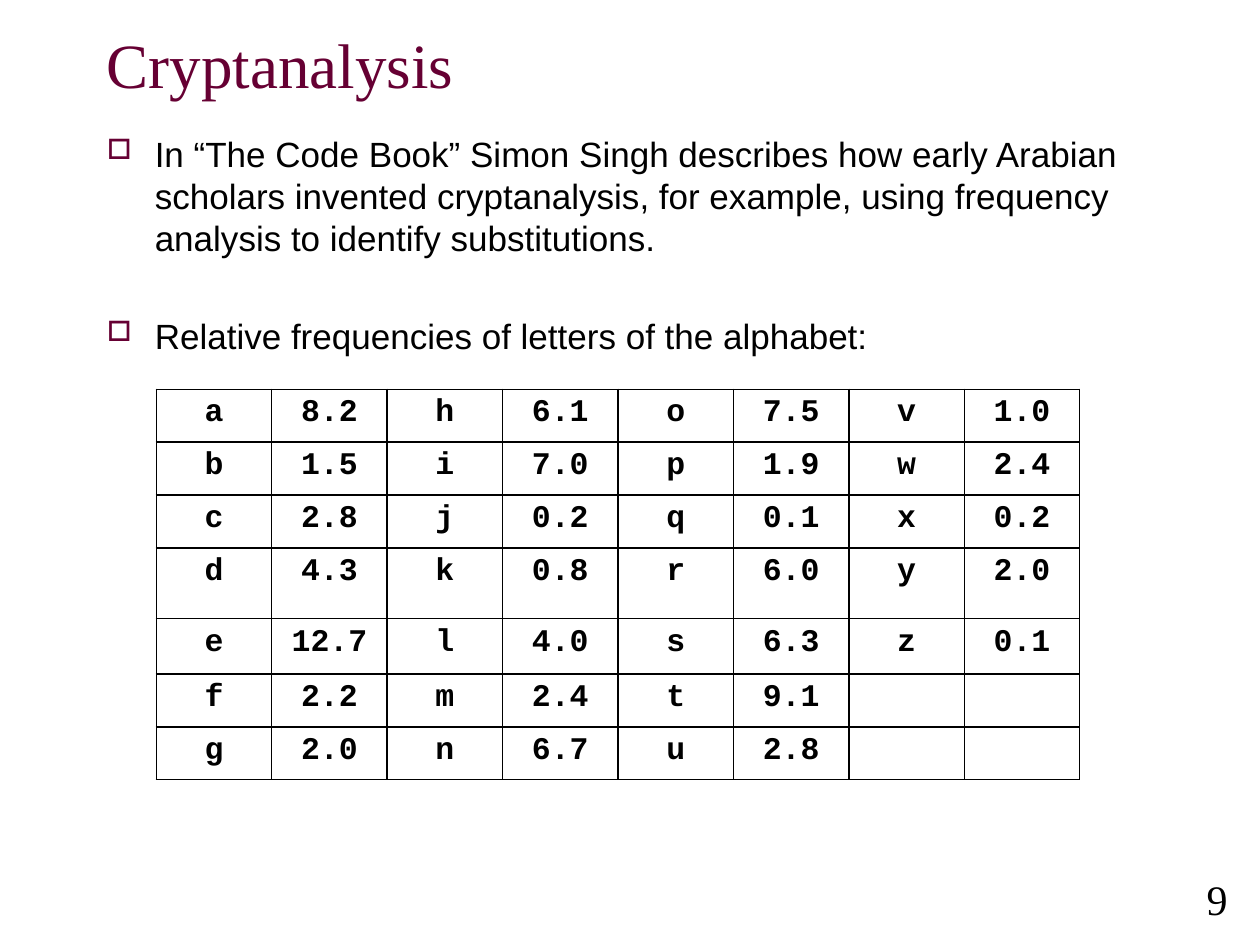
from itertools import chain, zip_longest

from lxml.etree import SubElement
from pptx import Presentation
from pptx.dml.color import RGBColor
from pptx.enum.text import MSO_ANCHOR, PP_ALIGN
from pptx.oxml.ns import qn
from pptx.util import Inches, Pt

BLACK = RGBColor(0x00, 0x00, 0x00)
PLUM = RGBColor(0x66, 0x00, 0x33)

TITLE_FORMAT = {"name": "Times New Roman", "size": Pt(36), "color": PLUM}
BODY_FORMAT = {"name": "Arial", "size": Pt(20), "color": BLACK}
CELL_FORMAT = {"name": "Courier New", "size": Pt(18), "bold": True, "color": BLACK}
NUMBER_FORMAT = {"name": "Times New Roman", "size": Pt(24), "color": BLACK}

POINTS = [
    "In “The Code Book” Simon Singh describes how early Arabian scholars invented "
    "cryptanalysis, for example, using frequency analysis to identify substitutions.",
    "Relative frequencies of letters of the alphabet:",
]
LETTER_GROUPS = ["abcdefg", "hijklmn", "opqrstu", "vwxyz"]
FREQUENCY_GROUPS = [
    ["8.2", "1.5", "2.8", "4.3", "12.7", "2.2", "2.0"],
    ["6.1", "7.0", "0.2", "0.8", "4.0", "2.4", "6.7"],
    ["7.5", "1.9", "0.1", "6.0", "6.3", "9.1", "2.8"],
    ["1.0", "2.4", "0.2", "2.0", "0.1"],
]
ROW_HEIGHTS = [0.42, 0.42, 0.42, 0.56, 0.44, 0.42, 0.42]


def apply_format(font, values):
    """Set font attributes from a dict of format values."""
    for attribute, value in values.items():
        if attribute == "color":
            font.color.rgb = value
        else:
            setattr(font, attribute, value)


def add_frame(slide, box, anchor=MSO_ANCHOR.TOP):
    """Add a wrapping text box and return its text frame."""
    frame = slide.shapes.add_textbox(*map(Inches, box)).text_frame
    frame.word_wrap = True
    frame.vertical_anchor = anchor
    return frame


def add_line(slide, box, text, values, anchor=MSO_ANCHOR.TOP, align=PP_ALIGN.LEFT):
    """Place a single line of formatted text in the box."""
    line = add_frame(slide, box, anchor).paragraphs[0]
    line.text = text
    line.alignment = align
    apply_format(line.font, values)


def add_bullet(paragraph):
    """Give the paragraph a hanging square bullet."""
    properties = paragraph._p.get_or_add_pPr()
    properties.set("marL", str(Inches(0.38)))
    properties.set("indent", str(-Inches(0.38)))
    color = SubElement(properties, qn("a:buClr"))
    SubElement(color, qn("a:srgbClr"), val=str(PLUM))
    SubElement(properties, qn("a:buSzPct"), val="80000")
    SubElement(properties, qn("a:buChar"), char="□")


def add_points(slide, box):
    """Place the bulleted points in the box."""
    frame = add_frame(slide, box)
    for index, text in enumerate(POINTS):
        point = frame.add_paragraph() if index else frame.paragraphs[0]
        point.text = text
        add_bullet(point)
        if index:
            point.space_before = Pt(32)
        apply_format(point.font, BODY_FORMAT)


def add_borders(cell):
    """Draw a thin black line on each side of the cell."""
    properties = cell._tc.get_or_add_tcPr()
    for side in ("a:lnL", "a:lnR", "a:lnT", "a:lnB"):
        border = SubElement(properties, qn(side), w=str(Pt(1)))
        fill = SubElement(border, qn("a:solidFill"))
        SubElement(fill, qn("a:srgbClr"), val=str(BLACK))


def add_frequencies(slide, box):
    """Place the table of letter frequencies in the box."""
    columns = list(chain.from_iterable(zip(LETTER_GROUPS, FREQUENCY_GROUPS)))
    rows = list(zip_longest(*columns, fillvalue=""))
    table = slide.shapes.add_table(len(rows), len(columns), *map(Inches, box)).table
    table.first_row = False
    table.horz_banding = False
    for row, height in zip(table.rows, ROW_HEIGHTS):
        row.height = Inches(height)
    for cell, text in zip(table.iter_cells(), chain.from_iterable(rows)):
        add_borders(cell)
        cell.fill.background()
        entry = cell.text_frame.paragraphs[0]
        entry.text = text
        entry.alignment = PP_ALIGN.CENTER
        apply_format(entry.font, CELL_FORMAT)


def main():
    """Build the slide and save it."""
    presentation = Presentation()
    presentation.slide_width = Inches(10)
    presentation.slide_height = Inches(7.5)
    slide = presentation.slides.add_slide(presentation.slide_layouts[6])
    add_line(slide, (8.59, 6.88, 1.25, 0.51), "9", NUMBER_FORMAT, align=PP_ALIGN.RIGHT)
    add_line(slide, (0.75, 0, 8.5, 1), "Cryptanalysis", TITLE_FORMAT, MSO_ANCHOR.MIDDLE)
    add_points(slide, (0.75, 1, 8.58, 5.67))
    add_frequencies(slide, (1.24, 3.09, 7.33, sum(ROW_HEIGHTS)))
    presentation.save("out.pptx")


if __name__ == "__main__":
    main()
